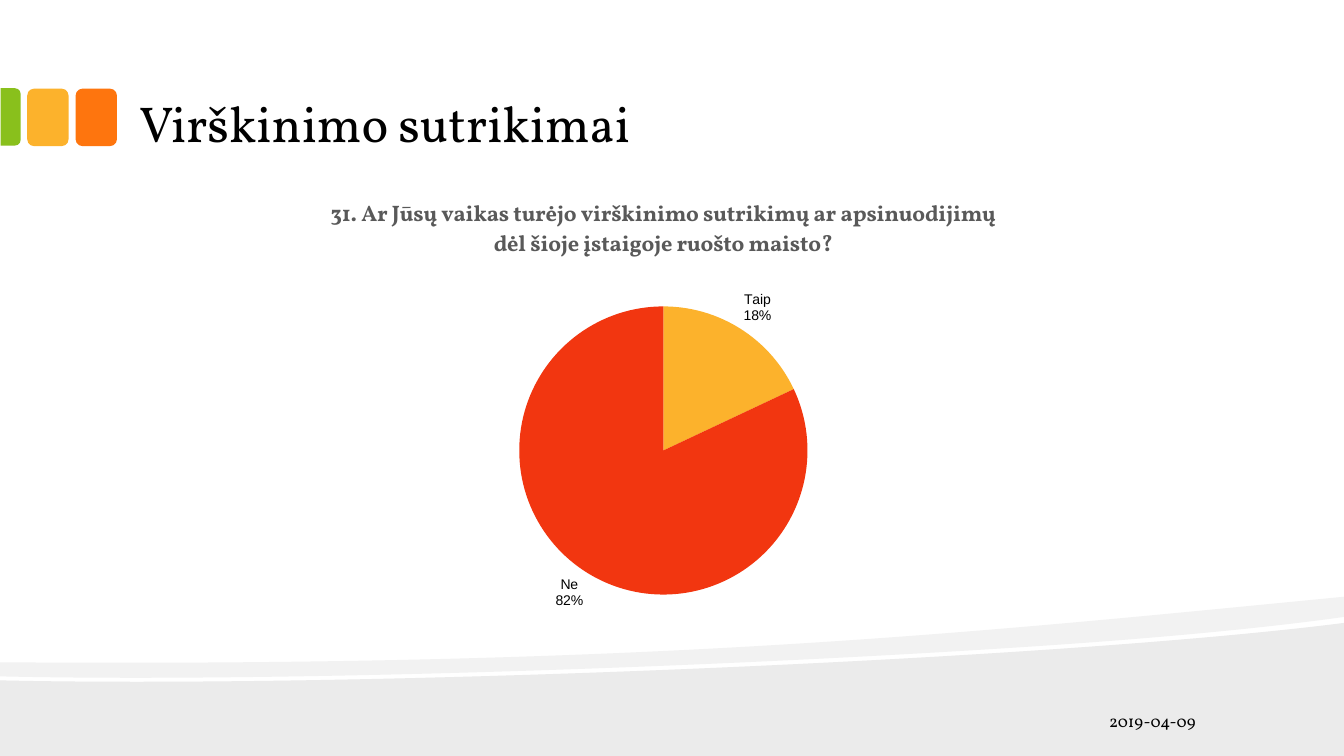
from lxml.etree import SubElement
from pptx import Presentation
from pptx.chart.data import CategoryChartData
from pptx.dml.color import RGBColor
from pptx.enum.chart import XL_CHART_TYPE, XL_LABEL_POSITION
from pptx.enum.shapes import MSO_SHAPE
from pptx.enum.text import MSO_ANCHOR, MSO_AUTO_SIZE, PP_ALIGN
from pptx.oxml.ns import qn
from pptx.util import Inches, Pt

# Content
TITLE = "Virškinimo sutrikimai"
QUESTION = ("31. Ar Jūsų vaikas turėjo virškinimo sutrikimų ar apsinuodijimų "
            "dėl šioje įstaigoje ruošto maisto?")
DATE = "2019-04-09"

BLACK = RGBColor(0x00, 0x00, 0x00)
GREY = RGBColor(0x59, 0x59, 0x59)
ORANGE = RGBColor(0xFE, 0x75, 0x0E)
YELLOW = RGBColor(0xFC, 0xB2, 0x2C)
GREEN = RGBColor(0x89, 0xC0, 0x1C)
RED = RGBColor(0xF2, 0x36, 0x10)
WAVE_GREY = RGBColor(0xEB, 0xEB, 0xEB)
BAND_GREY = RGBColor(0xF2, 0xF2, 0xF2)

ANSWERS = [("Taip", 18, YELLOW), ("Ne", 82, RED)]

# Geometry in inches
W, H = 13.33, 7.5
TILE_W, TILE_H, TILE_TOP, TILE_STEP = 0.41, 0.57, 0.88, 0.48
CHART = (2.3, 1.78, 8.56, 4.49)
PIE = (5.15, 3.04, 2.86, 2.86)
# Outlines: a start, then segments of one point (line) or three (curve)
WAVE = [[(W, 6.18)], [(W, H)], [(0, H)], [(0, 6.75)],
        [(3.52, 6.83), (10.42, 6.55), (W, 6.18)]]
BAND = [[(W, 5.92)], [(W, 6.12)],
        [(12.55, 6.23), (11.49, 6.33), (10.29, 6.41)],
        [(6.98, 6.63), (2.58, 6.77), (0, 6.71)],
        [(0, 6.57)],
        [(6.52, 6.62), (9.71, 6.27), (W, 5.92)]]


def box(*lengths):
    return [Inches(v) for v in lengths]


def paint(sp, color):
    sp.shadow.inherit = False
    sp.fill.solid()
    sp.fill.fore_color.rgb = color
    sp.line.fill.background()


def outline(segments, color):
    points = [(round(x * 1000), round(y * 1000)) for seg in segments for x, y in seg]
    fb = s.shapes.build_freeform(*points[0], scale=Inches(1) / 1000)
    fb.add_line_segments(points[1:], close=True)
    sp = fb.convert_to_shape()
    paint(sp, color)
    # Join the three lines of each curve segment into one Bezier
    lines = iter(list(sp._element.iter(qn("a:lnTo"))))
    for seg in segments[1:]:
        parts = [next(lines) for _ in seg]
        if len(parts) == 3:
            curve = SubElement(parts[0].getparent(), qn("a:cubicBezTo"))
            parts[0].addprevious(curve)
            for part in parts:
                curve.append(part[0])
                part.getparent().remove(part)


def style(font, size, color=BLACK, name="Vollkorn", bold=False):
    font.size, font.name, font.bold = Pt(size), name, bold
    font.color.rgb = color


def write(tf, text, size, align=PP_ALIGN.LEFT, anchor=MSO_ANCHOR.MIDDLE):
    tf.word_wrap, tf.auto_size, tf.vertical_anchor = True, MSO_AUTO_SIZE.NONE, anchor
    tf.margin_left = tf.margin_right = Inches(0.13)
    tf.margin_top = tf.margin_bottom = Inches(0.07)
    p = tf.paragraphs[0]
    p.alignment = align
    r = p.add_run()
    r.text = text
    style(r.font, size)


prs = Presentation()
prs.slide_width, prs.slide_height = box(W, H)
s = prs.slides.add_slide(prs.slide_layouts[5])

# Waves along the bottom
outline(WAVE, WAVE_GREY)
outline(BAND, BAND_GREY)

# Coloured tiles, the last one cut by the slide edge
for i, color in enumerate((YELLOW, ORANGE)):
    tile = s.shapes.add_shape(MSO_SHAPE.ROUNDED_RECTANGLE,
                              *box(0.27 + i * TILE_STEP, TILE_TOP, TILE_W, TILE_H))
    paint(tile, color)
edge_tile = s.shapes.add_shape(MSO_SHAPE.ROUND_2_SAME_RECTANGLE,
                               *box(-0.18, 1.06, TILE_H, 0.2))
edge_tile.rotation = 90
edge_tile.adjustments[0] = 0.292
paint(edge_tile, GREEN)

# Title
title = s.shapes.title
title.left, title.top, title.width, title.height = box(1.25, 0.16, 10.66, 1.42)
write(title.text_frame, TITLE, 36, anchor=MSO_ANCHOR.BOTTOM)

# Pie chart
data = CategoryChartData()
data.categories = [name for name, _, _ in ANSWERS]
data.add_series(QUESTION, [value for _, value, _ in ANSWERS])
chart = s.shapes.add_chart(XL_CHART_TYPE.PIE, *box(*CHART), data).chart
style(chart.font, 10, name="Arial")
chart.has_legend = False
chart.has_title = True
r = chart.chart_title.text_frame.paragraphs[0].add_run()
r.text = QUESTION
style(r.font, 16, GREY, bold=True)

plot = chart.plots[0]
for i, (_, _, color) in enumerate(ANSWERS):
    point = plot.series[0].points[i].format
    point.fill.solid()
    point.fill.fore_color.rgb = color
    point.line.fill.background()

# Labels: category above percentage
plot.has_data_labels = True
labels = plot.data_labels
labels.show_value = False
labels.show_category_name = labels.show_percentage = True
labels.number_format, labels.number_format_is_linked = "0%", False
labels.position = XL_LABEL_POSITION.OUTSIDE_END
style(labels.font, 10, name="Arial")
chart_xml = chart._chartSpace
bubble = chart_xml.find(".//" + qn("c:showBubbleSize"))
separator = SubElement(bubble.getparent(), qn("c:separator"))
separator.text = "\n"
bubble.addnext(separator)

# Pie position as shares of the chart frame
area = chart_xml.find(".//" + qn("c:plotArea"))
for old in area.findall(qn("c:layout")):
    area.remove(old)
layout = SubElement(area, qn("c:layout"))
area.insert(0, layout)
manual = SubElement(layout, qn("c:manualLayout"))
cx, cy, cw, ch = CHART
px, py, pw, ph = PIE
for tag, val in (("layoutTarget", "inner"), ("xMode", "edge"), ("yMode", "edge"),
                 ("x", (px - cx) / cw), ("y", (py - cy) / ch),
                 ("w", pw / cw), ("h", ph / ch)):
    SubElement(manual, qn("c:" + tag)).set("val", str(val))

# Date
date = s.shapes.add_textbox(*box(10.44, 7.05, 1.55, 0.2))
write(date.text_frame, DATE, 12, align=PP_ALIGN.RIGHT)

prs.save("out.pptx")
